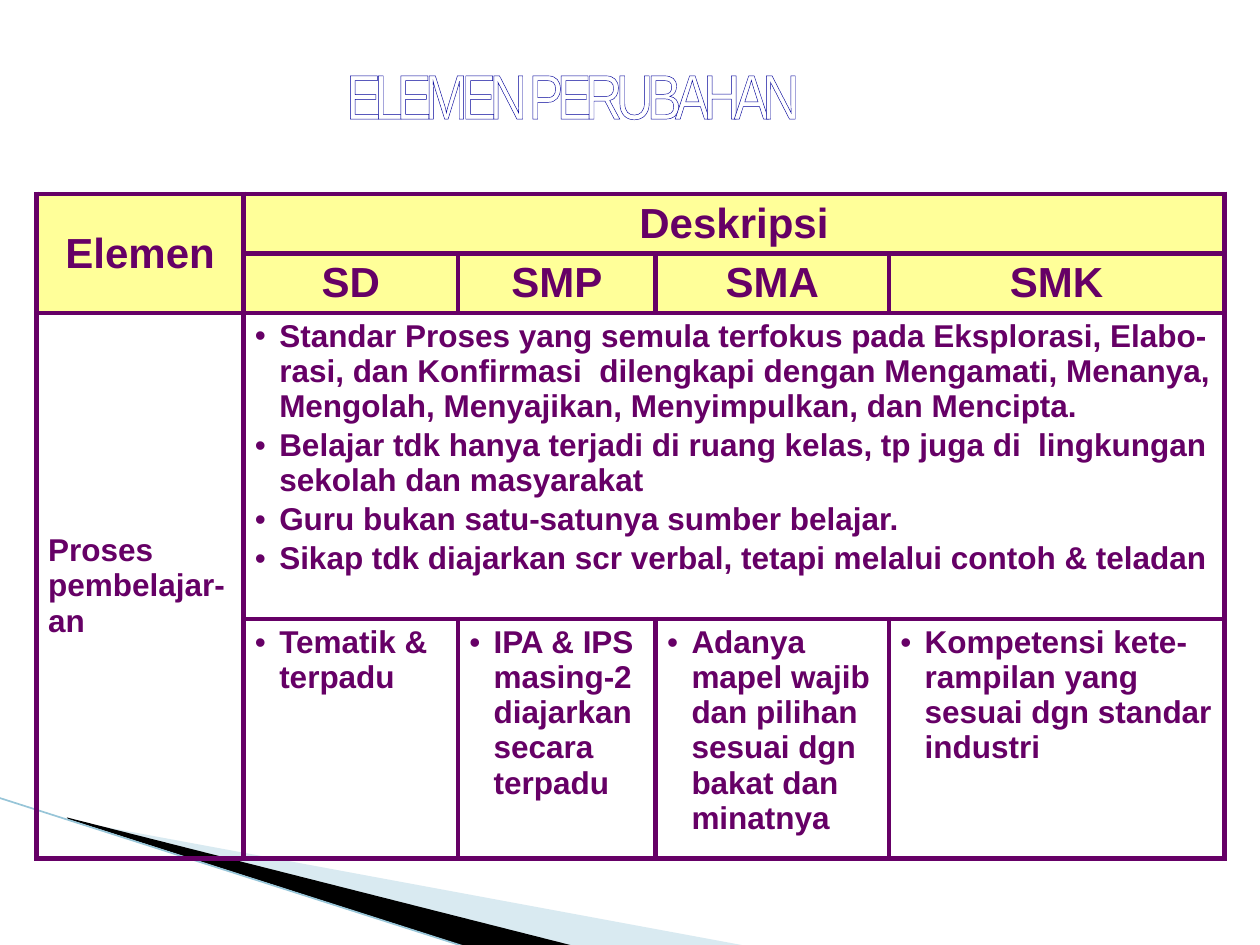
from dataclasses import dataclass

from lxml.etree import SubElement
from pptx import Presentation
from pptx.dml.color import RGBColor as Rgb
from pptx.enum.shapes import MSO_CONNECTOR as Connector
from pptx.enum.text import MSO_ANCHOR as Anchor, PP_ALIGN as Align
from pptx.oxml.ns import qn
from pptx.util import Cm, Pt


@dataclass(frozen=True)
class Theme:
    purple: str = "660066"
    yellow: str = "FFFF99"
    white: str = "FFFFFF"
    navy: str = "000099"
    black: str = "000000"
    pale_blue: str = "A0CBDC"
    line_blue: str = "97C5D8"
    title_size: int = 36
    header_size: int = 24
    body_size: int = 18


@dataclass(frozen=True)
class Wedge:
    points: tuple
    color: str
    opacity: int = 100


@dataclass(frozen=True)
class TableCell:
    row: int
    column: int
    lines: tuple
    rows: int = 1
    columns: int = 1
    header: bool = False
    bullets: bool = False


THEME = Theme()
TITLE_FORMAT = {"name": "Arial Narrow", "size": Pt(THEME.title_size), "bold": False}
HEADER_FORMAT = {"name": "Arial", "size": Pt(THEME.header_size), "bold": True}
BODY_FORMAT = {"name": "Arial", "size": Pt(THEME.body_size), "bold": True}
CELL_FORMAT = {"margin_left": Cm(0.23), "margin_right": Cm(0.23),
               "margin_top": Cm(0.11), "margin_bottom": Cm(0.11)}

WEDGES = (
    Wedge(((1.4, 16.54), (15.11, 19.08), (11.58, 19.08), (1.4, 16.51)),
          THEME.pale_blue, 40),
    Wedge(((1.35, 16.48), (11.61, 19.08), (9.45, 19.1), (1.37, 16.51)),
          THEME.black),
)
COLUMN_WIDTHS = (4.17, 4.32, 3.99, 4.7, 6.76)
ROW_HEIGHTS = (1.2, 1.2, 6.17, 4.83)
LEVELS = {
    "SD": "Tematik & terpadu",
    "SMP": "IPA & IPS masing-2 diajarkan secara terpadu",
    "SMA": "Adanya mapel wajib dan pilihan sesuai dgn bakat dan minatnya",
    "SMK": "Kompetensi kete-rampilan yang sesuai dgn standar industri",
}
SHARED_POINTS = (
    "Standar Proses yang semula terfokus pada Eksplorasi, Elabo-rasi, dan Konfirmasi  "
    "dilengkapi dengan Mengamati, Menanya, Mengolah, Menyajikan, Menyimpulkan, dan Mencipta.",
    "Belajar tdk hanya terjadi di ruang kelas, tp juga di  lingkungan sekolah dan masyarakat",
    "Guru bukan satu-satunya sumber belajar.",
    "Sikap tdk diajarkan scr verbal, tetapi melalui contoh & teladan",
)
CELLS = [
    TableCell(0, 0, ("Elemen",), rows=2, header=True),
    TableCell(0, 1, ("Deskripsi",), columns=4, header=True),
    TableCell(2, 0, ("Proses pembelajar-an",), rows=2),
    TableCell(2, 1, SHARED_POINTS, columns=4, bullets=True),
]
for position, (level, change) in enumerate(LEVELS.items(), start=1):
    CELLS.append(TableCell(1, position, (level,), header=True))
    CELLS.append(TableCell(3, position, (change,), bullets=True))


def apply_format(target, values: dict) -> None:
    for name, value in values.items():
        setattr(target, name, value)


def fill_solid(fill, color: str) -> None:
    fill.solid()
    fill.fore_color.rgb = Rgb.from_string(color)


def add_outline(parent, tag: str, color: str, width: float):
    line = SubElement(parent, qn(tag), w=str(Pt(width)))
    solid = SubElement(line, qn("a:solidFill"))
    SubElement(solid, qn("a:srgbClr"), val=color)
    return line


def draw_wedge(page, wedge: Wedge) -> None:
    points = [(Cm(x), Cm(y)) for x, y in wedge.points]
    builder = page.shapes.build_freeform(*points[0], scale=1.0)
    builder.add_line_segments(points[1:], close=True)
    shape = builder.convert_to_shape()
    shape.shadow.inherit = False
    shape.line.fill.background()
    fill_solid(shape.fill, wedge.color)
    if wedge.opacity < 100:
        color = shape.fill._xPr.find(".//" + qn("a:srgbClr"))
        SubElement(color, qn("a:alpha"), val=str(wedge.opacity * 1000))


def draw_edge_line(page) -> None:
    edge = page.shapes.add_connector(
        Connector.STRAIGHT, Cm(-0.03), Cm(16.08), Cm(9.42), Cm(19.1))
    edge.line.color.rgb = Rgb.from_string(THEME.line_blue)
    edge.line.width = Pt(0.95)
    SubElement(edge._element.spPr, qn("a:effectLst"))


def write_title(page, text: str) -> None:
    title = page.shapes.title
    apply_format(title, {"left": Cm(3.61), "top": Cm(0.84),
                         "width": Cm(15.88), "height": Cm(2.11)})
    apply_format(title.text_frame, {"word_wrap": False,
                                    "vertical_anchor": Anchor.MIDDLE})
    para = title.text_frame.paragraphs[0]
    para.alignment = Align.CENTER
    span = para.add_run()
    span.text = text
    apply_format(span.font, TITLE_FORMAT)
    fill_solid(span.font.fill, THEME.white)
    # Outlined, tightly spaced letters
    properties = span._r.get_or_add_rPr()
    properties.set("spc", "-360")
    properties.insert(0, add_outline(properties, "a:ln", THEME.navy, 1))


def add_bullet(para) -> None:
    properties = para._p.get_or_add_pPr()
    properties.set("marL", str(Cm(0.49)))
    properties.set("indent", str(-Cm(0.49)))
    SubElement(properties, qn("a:buFont"), typeface="Arial")
    SubElement(properties, qn("a:buChar"), char="•")


def write_cell(table, item: TableCell) -> None:
    cell = table.cell(item.row, item.column)
    if item.rows > 1 or item.columns > 1:
        cell.merge(table.cell(item.row + item.rows - 1,
                              item.column + item.columns - 1))
    cell.vertical_anchor = Anchor.TOP if item.bullets else Anchor.MIDDLE
    frame = cell.text_frame
    for index, line in enumerate(item.lines):
        para = frame.add_paragraph() if index else frame.paragraphs[0]
        para.alignment = Align.CENTER if item.header else Align.LEFT
        if index:
            para.space_before = Pt(2)
        if item.bullets:
            add_bullet(para)
        span = para.add_run()
        span.text = line
        apply_format(span.font, HEADER_FORMAT if item.header else BODY_FORMAT)
        span.font.color.rgb = Rgb.from_string(THEME.purple)


def draw_table(page) -> None:
    table = page.shapes.add_table(
        len(ROW_HEIGHTS), len(COLUMN_WIDTHS), Cm(0.74), Cm(3.91),
        Cm(sum(COLUMN_WIDTHS)), Cm(sum(ROW_HEIGHTS))).table
    apply_format(table, {"first_row": False, "horz_banding": False})
    for column, width in zip(table.columns, COLUMN_WIDTHS):
        column.width = Cm(width)
    for index, (row, height) in enumerate(zip(table.rows, ROW_HEIGHTS)):
        row.height = Cm(height)
        for cell in row.cells:
            apply_format(cell, CELL_FORMAT)
            for side in "LRTB":
                add_outline(cell._tc.get_or_add_tcPr(), f"a:ln{side}", THEME.purple, 3)
            if index < 2:
                fill_solid(cell.fill, THEME.yellow)
            else:
                cell.fill.background()
    for item in CELLS:
        write_cell(table, item)


def main() -> None:
    deck = Presentation()
    deck.slide_width, deck.slide_height = Cm(25.4), Cm(19.05)
    page = deck.slides.add_slide(deck.slide_layouts.get_by_name("Title Only"))
    # Corner decoration
    for wedge in WEDGES:
        draw_wedge(page, wedge)
    draw_edge_line(page)
    # Content
    write_title(page, "ELEMEN PERUBAHAN")
    draw_table(page)
    deck.save("out.pptx")


if __name__ == "__main__":
    main()
